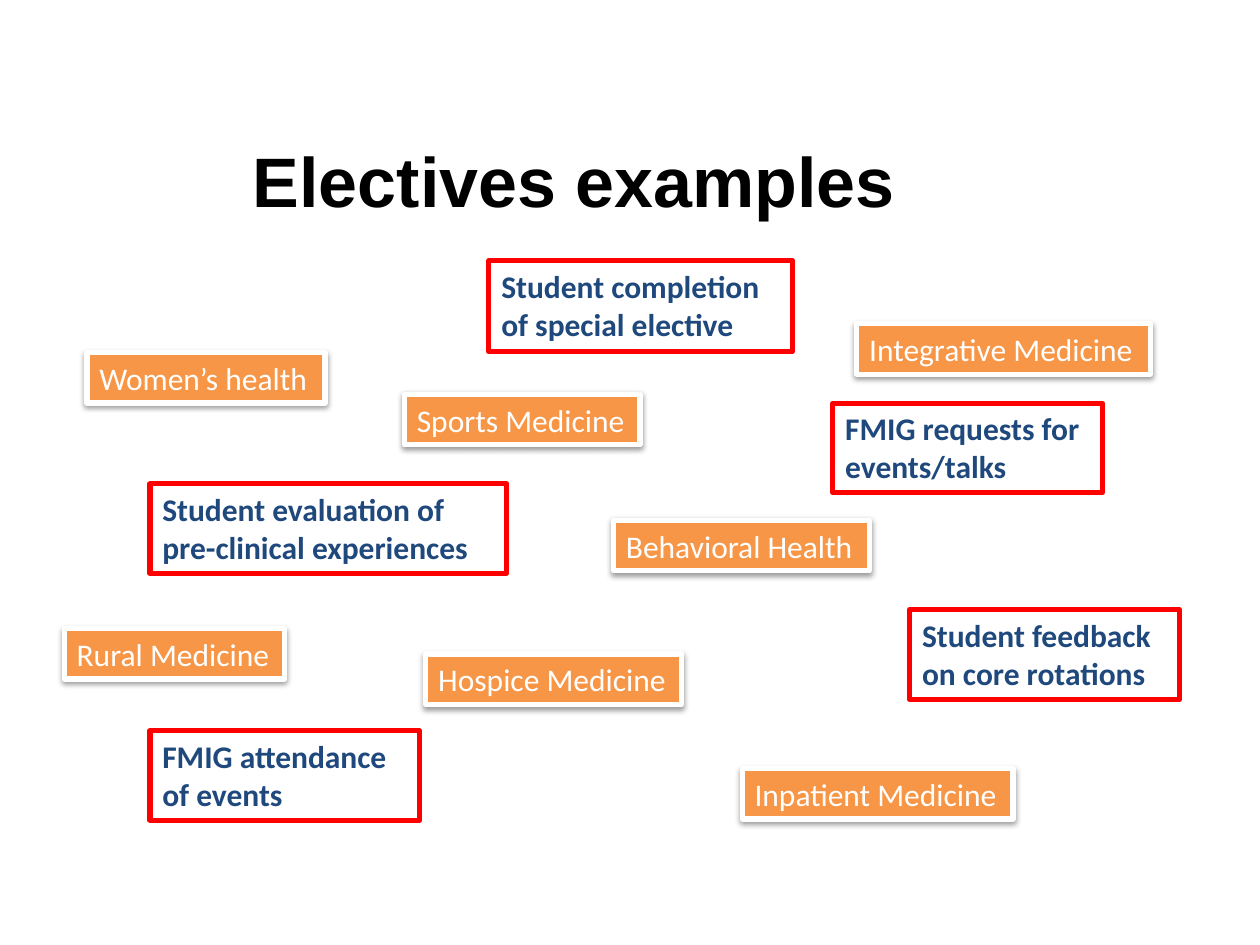
import pptx
import pptx.dml.color
import pptx.enum.shapes
import pptx.enum.text
import pptx.oxml
import pptx.oxml.ns
import pptx.util

EMU_PER_PX = 9144  # 100 px to the inch

TOPIC_HEIGHT = 40
TOPICS = [  # text, left, top, width
    ("Women’s health", 69, 280, 189),
    ("Integrative Medicine", 680, 257, 233),
    ("Behavioral Health", 487, 413, 203),
    ("Rural Medicine", 51, 499, 175),
    ("Hospice Medicine", 338, 519, 203),
    ("Sports Medicine", 321, 313, 187),
    ("Inpatient Medicine", 589, 610, 215),
]
ACTIVITIES = [  # text, left, top, width, height
    ("Student feedback on core rotations", 722, 484, 214, 71),
    ("Student completion of special elective", 388, 207, 241, 72),
    ("Student evaluation of pre-clinical experiences", 119, 384, 283, 71),
    ("FMIG attendance of events", 119, 580, 214, 71),
    ("FMIG requests for events/talks", 661, 320, 214, 71),
]


def px(length):
    return pptx.util.Emu(length * EMU_PER_PX)


def color(value):
    return pptx.dml.color.RGBColor.from_string(value)


def format_text(para, font_name, size, ink, bold, align):
    para.alignment = align
    for span in para.runs:
        span.font.name = font_name
        span.font.size = pptx.util.Pt(size)
        span.font.bold = bold
        span.font.color.rgb = color(ink)


def add_title(page, text, left, top, width, height):
    title = page.shapes.title
    title.left, title.top = px(left), px(top)
    title.width, title.height = px(width), px(height)
    frame = title.text_frame
    frame.text = text
    frame.vertical_anchor = pptx.enum.text.MSO_ANCHOR.MIDDLE
    format_text(frame.paragraphs[0], "Arial", 40, "000000", True,
                pptx.enum.text.PP_ALIGN.CENTER)


def add_label(page, text, left, top, width, height, outline, ink, bold, wrap):
    """Add a bordered rectangle without fill or shadow."""
    box = page.shapes.add_shape(pptx.enum.shapes.MSO_SHAPE.RECTANGLE,
                                px(left), px(top), px(width), px(height))
    box.shadow.inherit = False
    box.fill.background()
    box.line.color.rgb = color(outline)
    box.line.width = pptx.util.Pt(3)
    frame = box.text_frame
    frame.text = text
    frame.word_wrap = wrap
    frame.auto_size = pptx.enum.text.MSO_AUTO_SIZE.SHAPE_TO_FIT_TEXT
    frame.vertical_anchor = pptx.enum.text.MSO_ANCHOR.TOP
    format_text(frame.paragraphs[0], "Calibri", 18, ink, bold,
                pptx.enum.text.PP_ALIGN.LEFT)
    return box


def add_drop_shadow(box):
    effects = box._element.spPr.find(pptx.oxml.ns.qn("a:effectLst"))
    effects.append(pptx.oxml.parse_xml(
        f'<a:outerShdw {pptx.oxml.ns.nsdecls("a")} blurRad="40000" '
        'dist="20000" dir="5400000" rotWithShape="0">'
        '<a:srgbClr val="000000"><a:alpha val="38000"/></a:srgbClr>'
        '</a:outerShdw>'))


def add_topic(page, text, left, top, width):
    box = add_label(page, text, left, top, width, TOPIC_HEIGHT,
                    "FFFFFF", "FFFFFF", False, False)
    box.fill.solid()
    box.fill.fore_color.rgb = color("F79646")
    add_drop_shadow(box)


def add_activity(page, text, left, top, width, height):
    add_label(page, text, left, top, width, height,
              "FF0000", "1F497D", True, True)


def main():
    deck = pptx.Presentation()
    deck.slide_width, deck.slide_height = px(1000), px(750)
    page = deck.slides.add_slide(deck.slide_layouts.get_by_name("Title Only"))

    add_title(page, "Electives examples ", 51, 80, 824, 125)
    # Elective topics
    for topic in TOPICS:
        add_topic(page, *topic)
    # Student activities
    for activity in ACTIVITIES:
        add_activity(page, *activity)

    deck.save("out.pptx")


if __name__ == "__main__":
    main()
